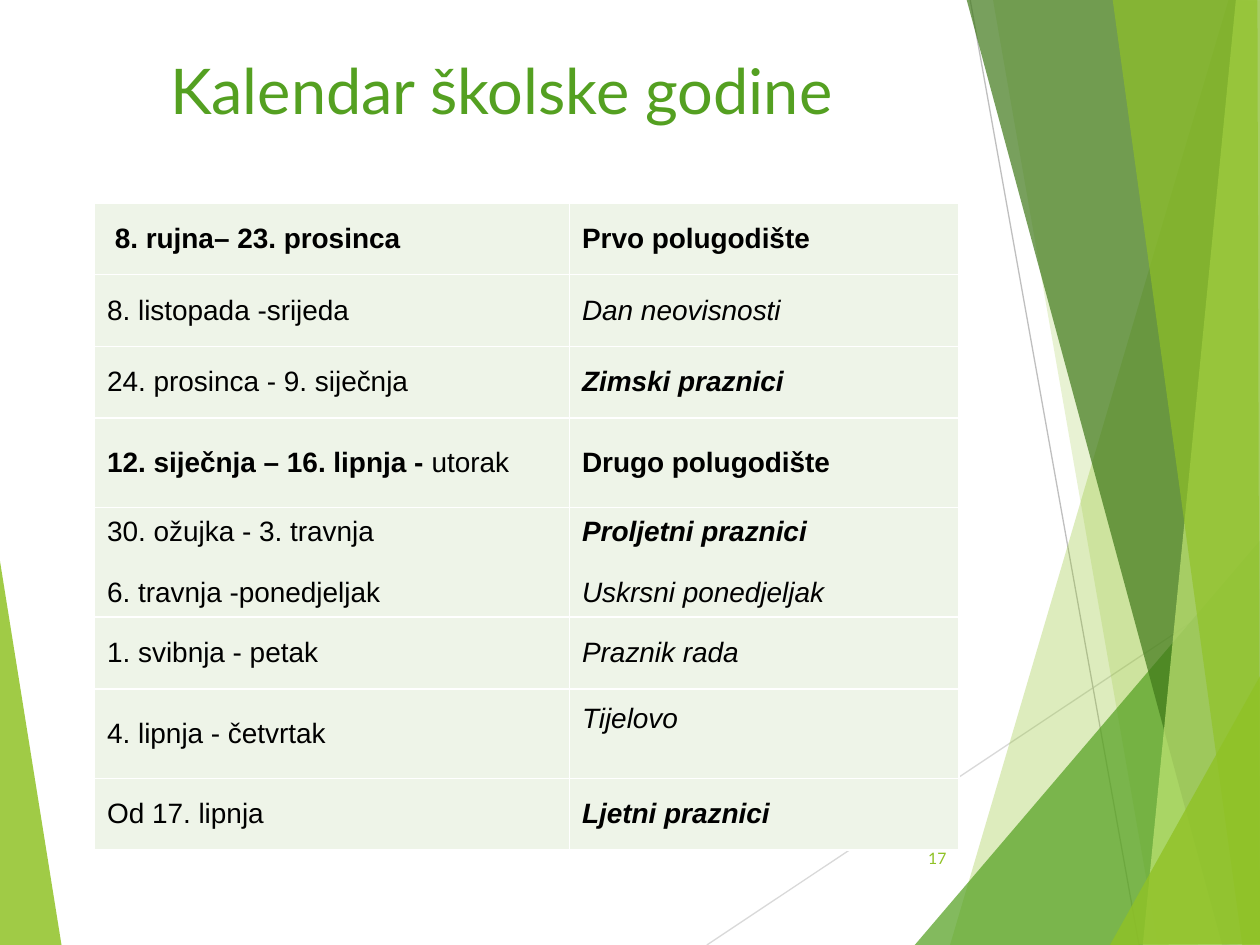
from dataclasses import dataclass

from lxml import etree
from pptx import Presentation
from pptx.dml.color import RGBColor
from pptx.enum import shapes, text
from pptx.oxml import ns
from pptx.util import Inches, Pt

Point = tuple[float, float]
LIME, GREEN, FOREST, PALE = "90C226", "54A021", "3F7819", "C0E474"


@dataclass
class Facet:
    color: str
    opacity: int
    points: list[Point]


@dataclass
class Ray:
    start: Point
    end: Point
    color: str


@dataclass
class Run:
    words: str
    bold: bool = False
    italic: bool = False


@dataclass
class Entry:
    height: float
    dates: list[list[Run]]
    events: list[list[Run]]
    event_bottom: float = 0.05


LEFT_FACET = Facet(LIME, 85, [(-0.01, 4.39), (0.49, 7.51), (-0.01, 7.5)])
RAYS = [
    Ray((5.61, 7.5), (10.01, 4.57), "D9D9D9"),
    Ray((7.7, 0), (9.04, 7.5), "BFBFBF"),
]
RIGHT_FACETS = [
    Facet(LIME, 30, [(9.75, 0), (7.54, 7.5), (10.02, 7.51), (10.01, 0.01)]),
    Facet(LIME, 20, [(7.88, -0.01), (9.19, 7.5), (10.01, 7.5), (10.01, -0.01)]),
    Facet(GREEN, 72, [(7.26, 7.5), (10, 4.29), (10.01, 7.5)]),
    Facet(FOREST, 70, [(7.67, -0.01), (9.7, 7.5), (10.01, 7.49), (10.01, -0.01)]),
    Facet(PALE, 70, [(9.81, -0.01), (9.07, 7.5), (10.01, 7.5), (10, -0.01)]),
    Facet(LIME, 65, [(8.83, -0.01), (9.86, 7.5), (10, 7.5), (9.98, -0.01)]),
    Facet(LIME, 80, [(8.81, 7.5), (10.01, 5.35), (10.01, 7.49)]),
]
LOW, HIGH = 0.57, 0.71
CALENDAR = [
    Entry(LOW, [[Run(" 8. rujna– 23. prosinca", bold=True)]],
          [[Run("Prvo polugodište", bold=True)]]),
    Entry(LOW, [[Run("8. listopada -srijeda")]], [[Run("Dan neovisnosti", italic=True)]]),
    Entry(LOW, [[Run("24. prosinca - 9. siječnja")]],
          [[Run("Zimski praznici", bold=True, italic=True)]]),
    Entry(HIGH, [[Run("12. siječnja – 16. lipnja - ", bold=True), Run("utorak")]],
          [[Run("Drugo polugodište", bold=True)]]),
    Entry(HIGH, [[Run("30. ožujka - 3. travnja")], [Run("6. travnja -ponedjeljak")]],
          [[Run("Proljetni praznici", bold=True, italic=True)],
           [Run("Uskrsni ponedjeljak", italic=True)]]),
    Entry(LOW, [[Run("1. svibnja - petak")]], [[Run("Praznik rada", italic=True)]]),
    Entry(HIGH, [[Run("4. lipnja - četvrtak")]], [[Run("Tijelovo", italic=True)]],
          event_bottom=0.29),
    Entry(LOW, [[Run("Od 17. lipnja")]],
          [[Run("Ljetni praznici", bold=True, italic=True)]]),
]


def paint(target, color: str) -> None:
    target.solid()
    target.fore_color.rgb = RGBColor.from_string(color)


def add_run(paragraph, run: Run, face: str, size: int, color: str) -> None:
    piece = paragraph.add_run()
    piece.text = run.words
    piece.font.name = face
    piece.font.size = Pt(size)
    piece.font.bold = run.bold
    piece.font.italic = run.italic
    paint(piece.font.fill, color)


def draw_facet(slide, facet: Facet) -> None:
    first, *rest = [(Inches(x), Inches(y)) for x, y in facet.points]
    builder = slide.shapes.build_freeform(*first)
    builder.add_line_segments(rest, close=True)
    outline = builder.convert_to_shape()
    outline.shadow.inherit = False
    outline.line.fill.background()
    paint(outline.fill, facet.color)
    tint = outline._element.spPr.find(ns.qn("a:solidFill"))[0]
    etree.SubElement(tint, ns.qn("a:alpha"), val=str(facet.opacity * 1000))


def draw_ray(slide, ray: Ray) -> None:
    ends = [Inches(value) for value in (*ray.start, *ray.end)]
    line = slide.shapes.add_connector(shapes.MSO_CONNECTOR.STRAIGHT, *ends)
    paint(line.line.fill, ray.color)
    line.line.width = Pt(0.75)
    etree.SubElement(line._element.spPr, ns.qn("a:effectLst"))


def draw_title(slide, words: str) -> None:
    title = slide.shapes.title
    title.left, title.top = Inches(1.25), Inches(0.36)
    title.width, title.height = Inches(8.75), Inches(1.25)
    frame = title.text_frame
    frame.auto_size = text.MSO_AUTO_SIZE.NONE
    frame.vertical_anchor = text.MSO_ANCHOR.TOP
    frame.paragraphs[0].alignment = text.PP_ALIGN.LEFT
    add_run(frame.paragraphs[0], Run(words), "Lato", 36, GREEN)


def draw_page_number(slide, number: str) -> None:
    frame = slide.shapes.add_textbox(
        Inches(7.05), Inches(6.61), Inches(0.56), Inches(0.4)).text_frame
    frame.word_wrap = True
    frame.vertical_anchor = text.MSO_ANCHOR.MIDDLE
    frame.paragraphs[0].alignment = text.PP_ALIGN.RIGHT
    add_run(frame.paragraphs[0], Run(number), "Lato", 9, LIME)


def fill_cell(cell, lines: list[list[Run]], bottom: float = 0.05) -> None:
    properties = cell._tc.get_or_add_tcPr()
    for side in ("lnL", "lnR", "lnT", "lnB"):
        border = etree.SubElement(properties, ns.qn(f"a:{side}"), w=str(Pt(1)))
        solid = etree.SubElement(border, ns.qn("a:solidFill"))
        etree.SubElement(solid, ns.qn("a:srgbClr"), val="FFFFFF")
    paint(cell.fill, "EEF4E8")
    cell.vertical_anchor = text.MSO_ANCHOR.MIDDLE
    cell.margin_bottom = Inches(bottom)
    frame = cell.text_frame
    for index, runs in enumerate(lines):
        paragraph = frame.add_paragraph() if index else frame.paragraphs[0]
        if index:
            paragraph.space_before = Pt(17)
        for run in runs:
            add_run(paragraph, run, "Arial", 16, "000000")


def draw_calendar(slide, entries: list[Entry]) -> None:
    height = sum(entry.height for entry in entries)
    table = slide.shapes.add_table(
        len(entries), 2, Inches(0.75), Inches(1.61), Inches(6.86), Inches(height)).table
    table.first_row = table.horz_banding = False
    for column, width in zip(table.columns, (3.77, 3.09)):
        column.width = Inches(width)
    for index, entry in enumerate(entries):
        table.rows[index].height = Inches(entry.height)
        fill_cell(table.cell(index, 0), entry.dates)
        fill_cell(table.cell(index, 1), entry.events, entry.event_bottom)


def main() -> None:
    deck = Presentation()
    deck.slide_width, deck.slide_height = Inches(10), Inches(7.5)
    slide = deck.slides.add_slide(deck.slide_layouts[5])
    draw_facet(slide, LEFT_FACET)
    for ray in RAYS:
        draw_ray(slide, ray)
    for facet in RIGHT_FACETS:
        draw_facet(slide, facet)
    draw_page_number(slide, "17")
    draw_title(slide, "Kalendar školske godine")
    draw_calendar(slide, CALENDAR)
    deck.save("out.pptx")


if __name__ == "__main__":
    main()
